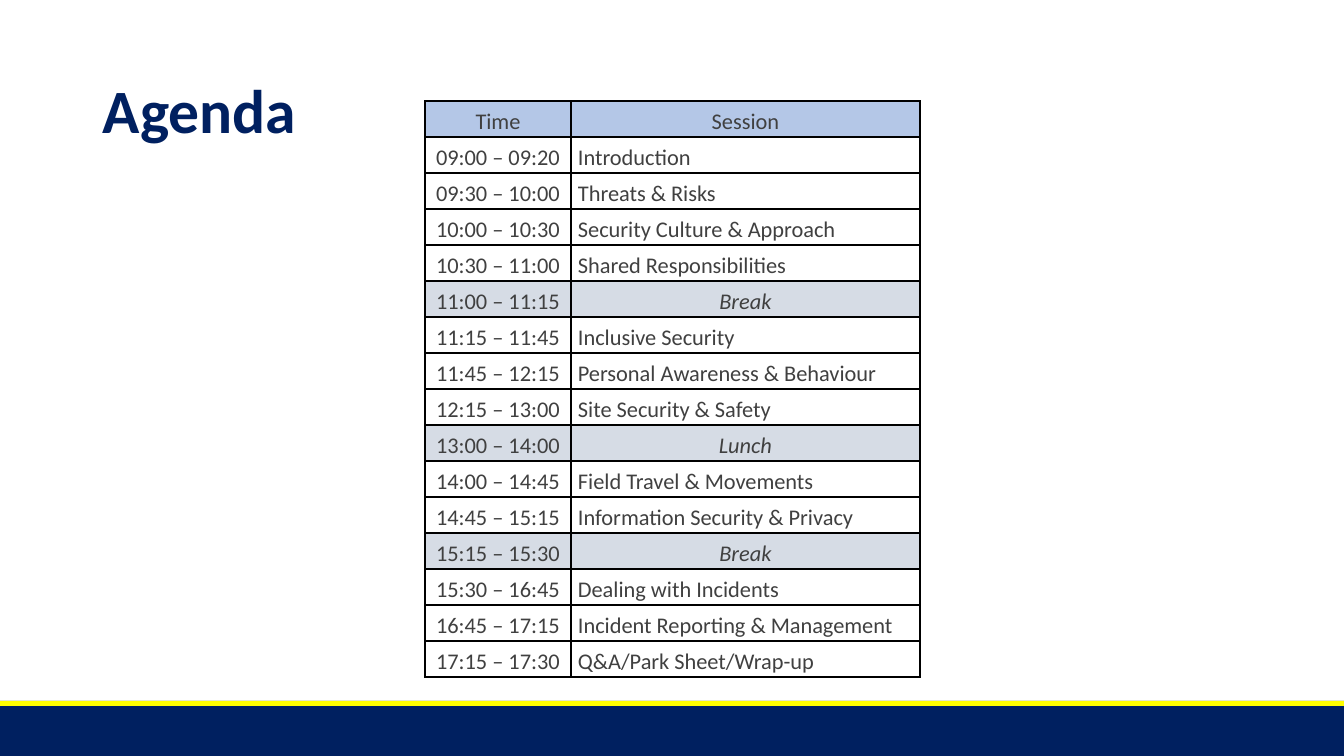
"""Build the agenda slide with its timetable."""
from dataclasses import dataclass
from typing import Any, NamedTuple

from lxml import etree
from pptx import Presentation
from pptx.dml.color import RGBColor
from pptx.enum.shapes import MSO_SHAPE
from pptx.enum.text import MSO_ANCHOR, PP_ALIGN
from pptx.oxml.ns import qn
from pptx.util import Emu, Pt

RECT = MSO_SHAPE.RECTANGLE
MIDDLE = MSO_ANCHOR.MIDDLE
LEFT, CENTER = PP_ALIGN.LEFT, PP_ALIGN.CENTER
SCALE = 914400 / 100.8
WIDTH, HEIGHT = 1344, 756


@dataclass(frozen=True)
class Theme:
    """Colours, font and type sizes of the slide."""
    navy: str = "002060"
    yellow: str = "FFFF00"
    header: str = "B4C7E7"
    pause: str = "D6DCE5"
    paper: str = "FFFFFF"
    ink: str = "404040"
    border: str = "000000"
    font: str = "Calibri"
    title: int = 44
    body: int = 16


class Band(NamedTuple):
    """A full-width stripe at the foot of the slide."""
    top: int
    height: int
    color: str


class Entry(NamedTuple):
    """One row of the timetable."""
    time: str
    session: str
    kind: str = "talk"


THEME = Theme()
BANDS = [Band(701, 55, THEME.navy), Band(701, 5, THEME.yellow)]
FILLS = {"head": THEME.header, "pause": THEME.pause, "talk": THEME.paper}
COLUMNS = (146, 349)
ROW = 36
AGENDA = [
    Entry("Time", "Session", "head"),
    Entry("09:00 – 09:20", "Introduction"),
    Entry("09:30 – 10:00", "Threats & Risks"),
    Entry("10:00 – 10:30", "Security Culture & Approach"),
    Entry("10:30 – 11:00", "Shared Responsibilities"),
    Entry("11:00 – 11:15", "Break", "pause"),
    Entry("11:15 – 11:45", "Inclusive Security"),
    Entry("11:45 – 12:15", "Personal Awareness & Behaviour"),
    Entry("12:15 – 13:00", "Site Security & Safety"),
    Entry("13:00 – 14:00", "Lunch", "pause"),
    Entry("14:00 – 14:45", "Field Travel & Movements"),
    Entry("14:45 – 15:15", "Information Security & Privacy"),
    Entry("15:15 – 15:30", "Break", "pause"),
    Entry("15:30 – 16:45", "Dealing with Incidents"),
    Entry("16:45 – 17:15", "Incident Reporting & Management"),
    Entry("17:15 – 17:30", "Q&A/Park Sheet/Wrap-up"),
]


def px(count: int) -> Emu:
    """Turn px into EMU."""
    return Emu(round(count * SCALE))


def apply(target: Any, values: dict[str, Any]) -> None:
    """Set each named value on the target."""
    for name, value in values.items():
        setattr(target, name, value)


def write(para: Any, text: str, size: int, color: str, **extra: bool) -> None:
    """Put one styled run in a paragraph."""
    run = para.add_run()
    run.text = text
    apply(run.font, {"name": THEME.font, "size": Pt(size), **extra})
    run.font.color.rgb = RGBColor.from_string(color)


def draw_band(slide: Any, band: Band) -> None:
    """Draw one stripe."""
    shape = slide.shapes.add_shape(
        RECT, 0, px(band.top), px(WIDTH), px(band.height))
    shape.shadow.inherit = False
    shape.fill.solid()
    shape.fill.fore_color.rgb = RGBColor.from_string(band.color)
    shape.line.fill.background()


def draw_title(slide: Any, text: str) -> None:
    """Draw the slide title."""
    box = slide.shapes.add_textbox(px(93), px(41), px(1159), px(146))
    apply(box.text_frame, {"word_wrap": True, "vertical_anchor": MIDDLE})
    para = box.text_frame.paragraphs[0]
    para.line_spacing = 0.9
    write(para, text, THEME.title, THEME.navy, bold=True)


def add_border(cell: Any) -> None:
    """Rule all four sides of a cell."""
    props = cell._tc.get_or_add_tcPr()
    for place, side in enumerate(("lnL", "lnR", "lnT", "lnB")):
        line = etree.Element(qn(f"a:{side}"), w=str(Pt(1)))
        fill = etree.SubElement(line, qn("a:solidFill"))
        etree.SubElement(fill, qn("a:srgbClr"), val=THEME.border)
        props.insert(place, line)


def fill_cell(cell: Any, text: str, color: str, align: Any, slant: bool) -> None:
    """Format one cell and write its text."""
    apply(cell, {
        "margin_left": px(7), "margin_right": px(7),
        "margin_top": 0, "margin_bottom": 0,
        "vertical_anchor": MIDDLE,
    })
    cell.fill.solid()
    cell.fill.fore_color.rgb = RGBColor.from_string(color)
    add_border(cell)
    para = cell.text_frame.paragraphs[0]
    apply(para, {"alignment": align, "line_spacing": 1.2, "space_after": Pt(6)})
    write(para, text, THEME.body, THEME.ink, italic=slant)


def draw_table(slide: Any, entries: list[Entry]) -> None:
    """Draw the timetable."""
    table = slide.shapes.add_table(
        len(entries), len(COLUMNS), px(425), px(101),
        px(sum(COLUMNS)), px(ROW * len(entries))).table
    apply(table, {"first_row": False, "horz_banding": False})
    for column, width in zip(table.columns, COLUMNS):
        column.width = px(width)
    for row, entry in zip(table.rows, entries):
        row.height = px(ROW)
        color = FILLS[entry.kind]
        align = LEFT if entry.kind == "talk" else CENTER
        fill_cell(row.cells[0], entry.time, color, CENTER, False)
        fill_cell(row.cells[1], entry.session, color, align,
                  entry.kind == "pause")


def main() -> None:
    """Build and save the deck."""
    deck = Presentation()
    apply(deck, {"slide_width": px(WIDTH), "slide_height": px(HEIGHT)})
    slide = deck.slides.add_slide(deck.slide_layouts[6])
    for band in BANDS:
        draw_band(slide, band)
    draw_title(slide, "Agenda")
    draw_table(slide, AGENDA)
    deck.save("out.pptx")


if __name__ == "__main__":
    main()
